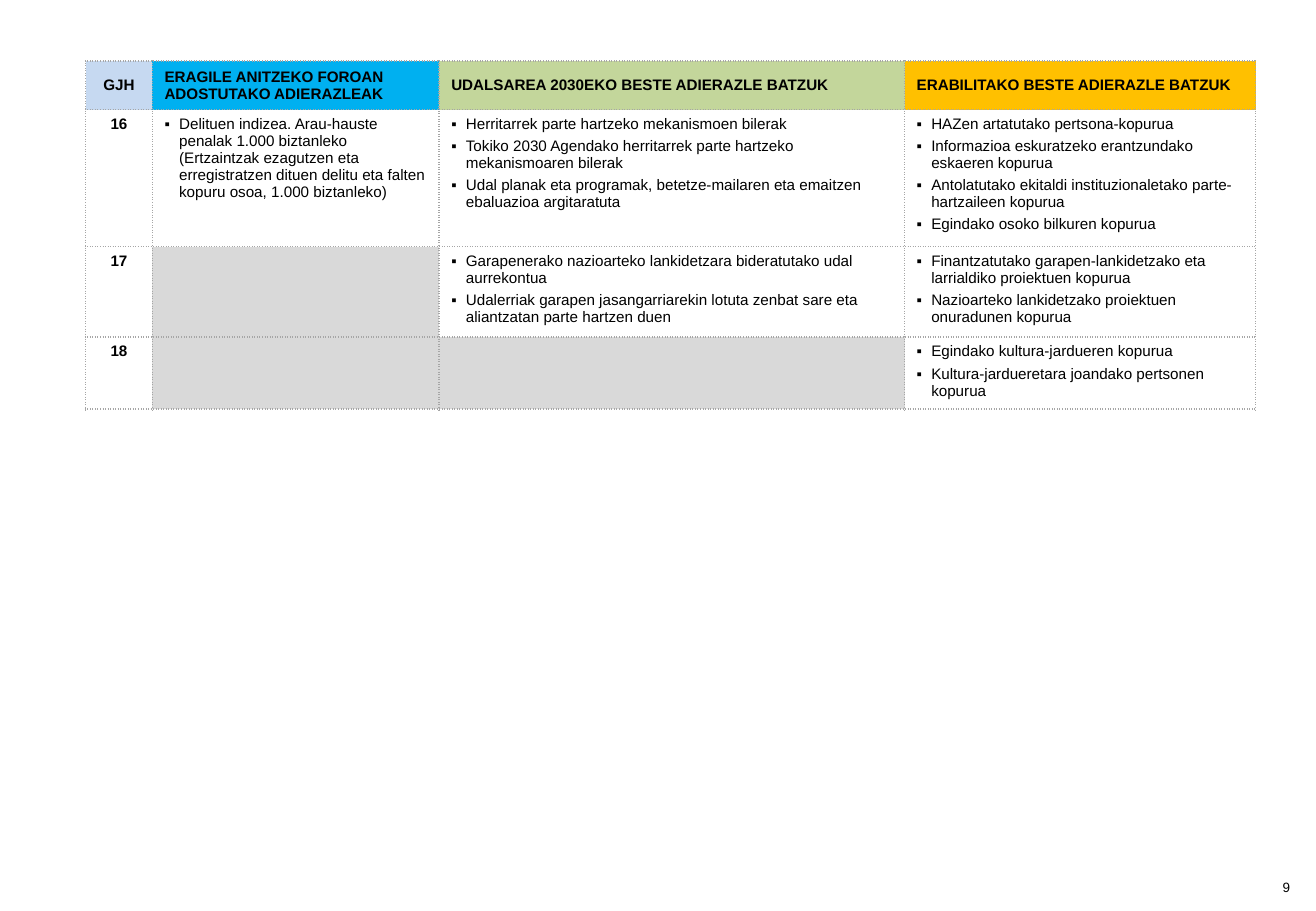
from lxml import etree
from pptx import Presentation, util as u
from pptx.dml.color import RGBColor
from pptx.enum import text
from pptx.oxml.ns import qn

WIDE, HIGH = 10.83, 7.5
HUES = {"ink": "000000", "edge": "A6A6A6", "goal": "C6D9F1", "forum": "00B0F0",
        "town": "C3D69B", "other": "FFC000", "void": "D9D9D9"}
COLS = [0.55, 2.36, 3.83, 2.89]
ROWS = [0.38, 1.06, 0.7, 0.56]
HEADS = [("GJH", "goal"),
         ("ERAGILE ANITZEKO FOROAN ADOSTUTAKO ADIERAZLEAK", "forum"),
         ("UDALSAREA 2030EKO BESTE ADIERAZLE BATZUK", "town"),
         ("ERABILITAKO BESTE ADIERAZLE BATZUK", "other")]
GOALS = [
    ("16",
     ["Delituen indizea. Arau-hauste penalak 1.000 biztanleko (Ertzaintzak ezagutzen eta "
      "erregistratzen dituen delitu eta falten kopuru osoa, 1.000 biztanleko)"],
     ["Herritarrek parte hartzeko mekanismoen bilerak",
      "Tokiko 2030 Agendako herritarrek parte hartzeko mekanismoaren bilerak",
      "Udal planak eta programak, betetze-mailaren eta emaitzen ebaluazioa argitaratuta"],
     ["HAZen artatutako pertsona-kopurua",
      "Informazioa eskuratzeko erantzundako eskaeren kopurua",
      "Antolatutako ekitaldi instituzionaletako parte-hartzaileen kopurua",
      "Egindako osoko bilkuren kopurua"]),
    ("17",
     [],
     ["Garapenerako nazioarteko lankidetzara bideratutako udal aurrekontua",
      "Udalerriak garapen jasangarriarekin lotuta zenbat sare eta aliantzatan parte hartzen duen"],
     ["Finantzatutako garapen-lankidetzako eta larrialdiko proiektuen kopurua",
      "Nazioarteko lankidetzako proiektuen onuradunen kopurua"]),
    ("18",
     [],
     [],
     ["Egindako kultura-jardueren kopurua",
      "Kultura-jardueretara joandako pertsonen kopurua"]),
]


class Page:
    def __init__(self, deck, face="Arial", size=9):
        self.slide = deck.slides.add_slide(deck.slide_layouts[6])
        self.face, self.size = face, size

    def box(self, x, y, w, h):
        """Turn shares of the slide's size into lengths."""
        return [u.Inches(n) for n in (x * WIDE, y * HIGH, w * WIDE, h * HIGH)]

    def run(self, para, words, bold=False, size=None):
        run = para.add_run()
        run.text = words
        font = run.font
        font.name, font.size, font.bold = self.face, u.Pt(size or self.size), bold
        font.color.rgb = RGBColor.from_string(HUES["ink"])

    def label(self, words, area, size):
        frame = self.slide.shapes.add_textbox(*self.box(*area)).text_frame
        frame.word_wrap = True
        frame.vertical_anchor = text.MSO_ANCHOR.MIDDLE
        para = frame.paragraphs[0]
        para.alignment = text.PP_ALIGN.CENTER
        self.run(para, words, size=size)

    def grid(self, x, y, cols, rows):
        area = self.box(x, y, sum(cols) / WIDE, sum(rows) / HIGH)
        table = self.slide.shapes.add_table(len(rows), len(cols), *area).table
        table.first_row = table.horz_banding = False
        for col, width in zip(table.columns, cols):
            col.width = u.Inches(width)
        for row, height in zip(table.rows, rows):
            row.height = u.Inches(height)
        for cell in table.iter_cells():
            cell.fill.background()
            self.edge(cell)
        return table

    def edge(self, cell):
        """Draw dotted borders on all four sides."""
        props = cell._tc.get_or_add_tcPr()
        for i, side in enumerate("LRTB"):
            line = etree.Element(qn(f"a:ln{side}"), w=str(u.Pt(0.96)))
            fill = etree.SubElement(line, qn("a:solidFill"))
            etree.SubElement(fill, qn("a:srgbClr"), val=HUES["edge"])
            etree.SubElement(line, qn("a:prstDash"), val="sysDot")
            props.insert(i, line)

    def paint(self, cell, hue):
        cell.fill.solid()
        cell.fill.fore_color.rgb = RGBColor.from_string(HUES[hue])

    def title(self, cell, words, mid=False):
        para = cell.text_frame.paragraphs[0]
        if mid:
            para.alignment = text.PP_ALIGN.CENTER
        self.run(para, words, bold=True)

    def items(self, cell, lines):
        frame = cell.text_frame
        for i, words in enumerate(lines):
            para = frame.add_paragraph() if i else frame.paragraphs[0]
            para.space_after = u.Pt(3)
            props = para._p.get_or_add_pPr()
            props.set("marL", str(u.Inches(0.12)))
            props.set("indent", str(u.Inches(-0.12)))
            tint = etree.SubElement(props, qn("a:buClr"))
            etree.SubElement(tint, qn("a:srgbClr"), val=HUES["ink"])
            etree.SubElement(props, qn("a:buFont"), typeface=self.face)
            etree.SubElement(props, qn("a:buChar"), char="▪")
            self.run(para, words)


def main():
    deck = Presentation()
    deck.slide_width, deck.slide_height = u.Inches(WIDE), u.Inches(HIGH)
    page = Page(deck)
    page.label("9", (0.956, 0.961, 0.043, 0.025), size=8)
    table = page.grid(0.065, 0.067, COLS, ROWS)
    for c, (words, hue) in enumerate(HEADS):
        cell = table.cell(0, c)
        cell.vertical_anchor = text.MSO_ANCHOR.MIDDLE
        page.paint(cell, hue)
        page.title(cell, words, mid=c == 0)
    for r, (goal, *lists) in enumerate(GOALS, 1):
        page.title(table.cell(r, 0), goal, mid=True)
        for c, lines in enumerate(lists, 1):
            cell = table.cell(r, c)
            if lines:
                page.items(cell, lines)
            else:
                page.paint(cell, "void")
    deck.save("out.pptx")


if __name__ == "__main__":
    main()
